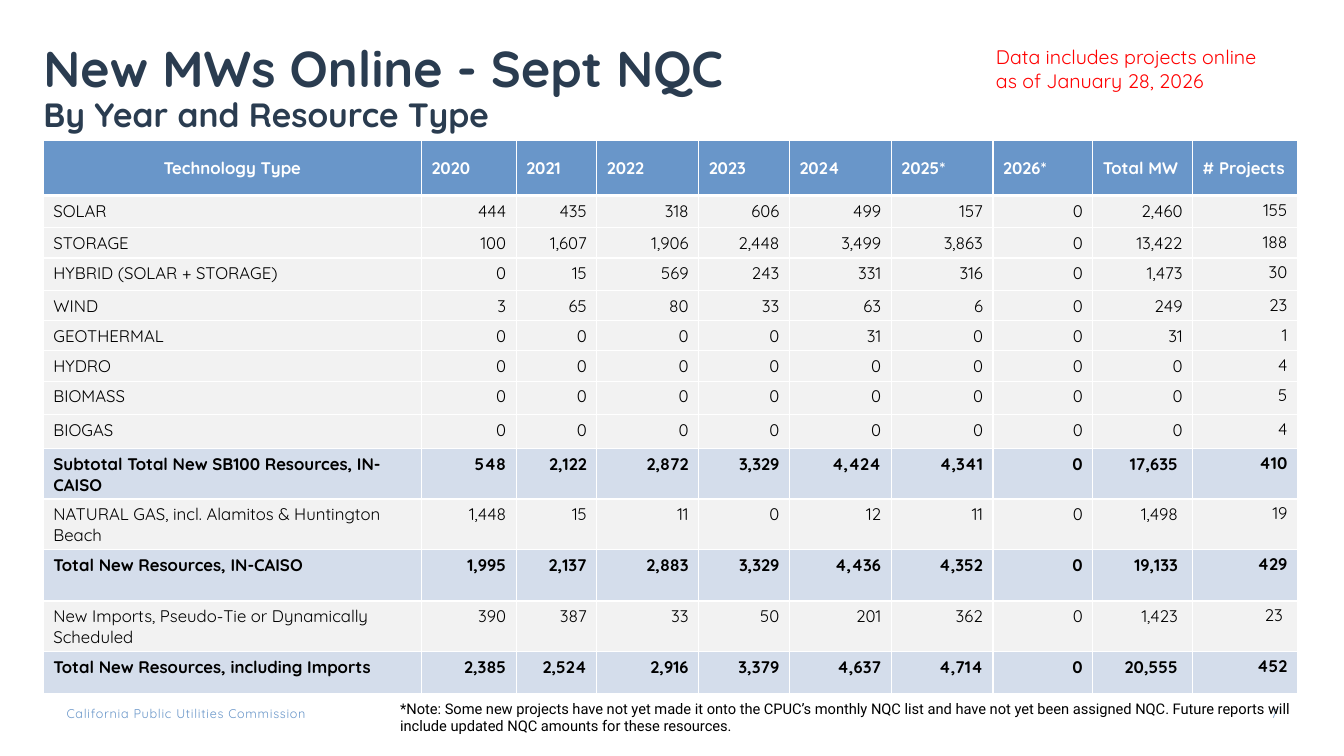
from dataclasses import dataclass

from lxml import etree
from pptx import Presentation
from pptx import util as u
from pptx.dml.color import RGBColor
from pptx.enum import text
from pptx.oxml import ns

COLORS = {
    "navy": "2A3C50",
    "blue": "6996C9",
    "pale_blue": "D4DDEB",
    "gray": "F2F2F2",
    "white": "FFFFFF",
    "black": "000000",
    "red": "FF0000",
}
FONT = "Quicksand"
LEFT, CENTER, RIGHT = text.PP_ALIGN.LEFT, text.PP_ALIGN.CENTER, text.PP_ALIGN.RIGHT
TOP, MIDDLE, BOTTOM = text.MSO_ANCHOR.TOP, text.MSO_ANCHOR.MIDDLE, text.MSO_ANCHOR.BOTTOM


@dataclass(frozen=True)
class Span:
    words: str
    size: float
    color: str
    bold: bool = False
    font: str = FONT
    tracking: float = 0


@dataclass(frozen=True)
class Label:
    place: tuple[float, float, float, float]
    spans: tuple[Span, ...]
    margins: tuple[float, float, float, float] = (0.1, 0.05, 0.1, 0.05)
    align: text.PP_ALIGN = LEFT
    anchor: text.MSO_ANCHOR = TOP
    line_spacing: float | None = None


@dataclass(frozen=True)
class Row:
    height: float
    cells: str
    total: bool = False


NO_MARGINS = (0, 0, 0, 0)
FOOTER = (
    Label((0.66, 7, 3.21, 0.15),
          (Span("California Public Utilities Commission", 9, "blue", tracking=0.5),), NO_MARGINS),
    Label((0.43, -0.06, 12, 1.45),
          (Span("New MWs Online - Sept NQC\n", 36, "navy", True),
           Span("By Year and Resource Type", 24, "navy", True)),
          (0, 0.05, 0.1, 0.05), anchor=BOTTOM, line_spacing=0.9),
    Label((12.25, 7, 0.42, 0.2), (Span("7", 9, "blue"),), NO_MARGINS, align=RIGHT),
)
NOTES = (
    Label((3.87, 6.89, 9.46, 0.45),
          (Span("*Note: Some new projects have not yet made it onto the CPUC’s monthly NQC list "
                "and have not yet been assigned NQC. Future reports will include updated NQC "
                "amounts for these resources.", 10.5, "black", font="Roboto"),)),
    Label((9.78, 0.4, 4.72, 0.88),
          (Span("Data includes projects online\nas of January 28, 2026", 14, "red"),)),
)

COLUMN_WIDTHS = (3.75, 0.94, 0.8, 1.01, 0.9, 1.01, 1.01, 0.99, 0.99, 1.04)
HEADER = Row(0.55, "Technology Type|2020|2021|2022|2023|2024|2025*|2026*|Total MW|# Projects")
RESOURCES = (
    Row(0.32, "SOLAR|444|435|318|606|499|157|0|2,460|155"),
    Row(0.3, "STORAGE|100|1,607|1,906|2,448|3,499|3,863|0|13,422|188"),
    Row(0.32, "HYBRID (SOLAR + STORAGE)|0|15|569|243|331|316|0|1,473|30"),
    Row(0.3, "WIND|3|65|80|33|63|6|0|249|23"),
    Row(0.3, "GEOTHERMAL|0|0|0|0|31|0|0|31|1"),
    Row(0.3, "HYDRO|0|0|0|0|0|0|0|0|4"),
    Row(0.33, "BIOMASS|0|0|0|0|0|0|0|0|5"),
    Row(0.34, "BIOGAS|0|0|0|0|0|0|0|0|4"),
    Row(0.5, "Subtotal Total New SB100 Resources, IN-CAISO"
             "|548|2,122|2,872|3,329|4,424|4,341|0|17,635 |410", True),
    Row(0.4, "NATURAL GAS, incl. Alamitos & Huntington Beach"
             "|1,448|15|11|0|12|11|0| 1,498 |19"),
    Row(0.51, "Total New Resources, IN-CAISO"
              "|1,995|2,137|2,883|3,329|4,436|4,352|0| 19,133 |429", True),
    Row(0.4, "New Imports, Pseudo-Tie or Dynamically Scheduled"
             "|390|387|33|50|201|362|0| 1,423 |23 "),
    Row(0.42, "Total New Resources, including Imports"
              "|2,385|2,524|2,916|3,379|4,637|4,714|0| 20,555 |452", True),
)


def rgb(name: str) -> RGBColor:
    return RGBColor.from_string(COLORS[name])


def write_text(para, words: str, *, size: float, color: str, bold: bool = False,
               font: str = FONT, tracking: float = 0) -> None:
    for index, line in enumerate(words.split("\n")):
        if index:
            para.add_line_break()
        if not line:
            continue
        span = para.add_run()
        span.text = line
        span.font.name = font
        span.font.size = u.Pt(size)
        span.font.bold = bold
        span.font.color.rgb = rgb(color)
        if tracking:
            span.font._element.set("spc", str(round(tracking * 100)))


def add_label(page, label: Label) -> None:
    box = page.shapes.add_textbox(*(u.Inches(length) for length in label.place))
    frame = box.text_frame
    frame.word_wrap = True
    frame.vertical_anchor = label.anchor
    (frame.margin_left, frame.margin_top,
     frame.margin_right, frame.margin_bottom) = (u.Inches(m) for m in label.margins)
    para = frame.paragraphs[0]
    para.alignment = label.align
    para.line_spacing = label.line_spacing
    for span in label.spans:
        write_text(para, span.words, size=span.size, color=span.color, bold=span.bold,
                   font=span.font, tracking=span.tracking)


def add_borders(cell, widths: dict[str, float]) -> None:
    properties = cell._tc.get_or_add_tcPr()
    for side in ("L", "R", "T", "B"):
        line = etree.SubElement(properties, ns.qn(f"a:ln{side}"), w=str(u.Pt(widths.get(side, 1))))
        fill = etree.SubElement(line, ns.qn("a:solidFill"))
        etree.SubElement(fill, ns.qn("a:srgbClr"), val=COLORS["white"])


def fill_cell(cell, words: str, row: Row, column: int) -> None:
    header = row is HEADER
    projects = column == len(COLUMN_WIDTHS) - 1
    if header:
        add_borders(cell, {"B": 3})
    else:
        add_borders(cell, {"R": 0.75, "B": 0.75} if projects else {})
    cell.fill.solid()
    cell.fill.fore_color.rgb = rgb("blue" if header else "pale_blue" if row.total else "gray")
    cell.vertical_anchor = MIDDLE if header else TOP
    para = cell.text_frame.paragraphs[0]
    if header:
        para.alignment = LEFT if column else CENTER
    else:
        para.alignment = RIGHT if column else LEFT
        if projects:
            para.line_spacing = u.Pt(14.2)
    write_text(para, words, size=12, color="white" if header else "black",
               bold=header or row.total)


def add_resource_table(page) -> None:
    rows = (HEADER, *RESOURCES)
    table = page.shapes.add_table(len(rows), len(COLUMN_WIDTHS), u.Inches(0.43), u.Inches(1.39),
                                  u.Inches(sum(COLUMN_WIDTHS)),
                                  u.Inches(sum(row.height for row in rows))).table
    table.horz_banding = False
    for column, width in zip(table.columns, COLUMN_WIDTHS):
        column.width = u.Inches(width)
    for index, row in enumerate(rows):
        table.rows[index].height = u.Inches(row.height)
        for column, words in enumerate(row.cells.split("|")):
            fill_cell(table.cell(index, column), words, row, column)


def main() -> None:
    deck = Presentation()
    deck.slide_width, deck.slide_height = u.Inches(13.33), u.Inches(7.5)
    page = deck.slides.add_slide(deck.slide_layouts[6])
    for label in FOOTER:
        add_label(page, label)
    add_resource_table(page)
    for label in NOTES:
        add_label(page, label)
    deck.save("out.pptx")


if __name__ == "__main__":
    main()
